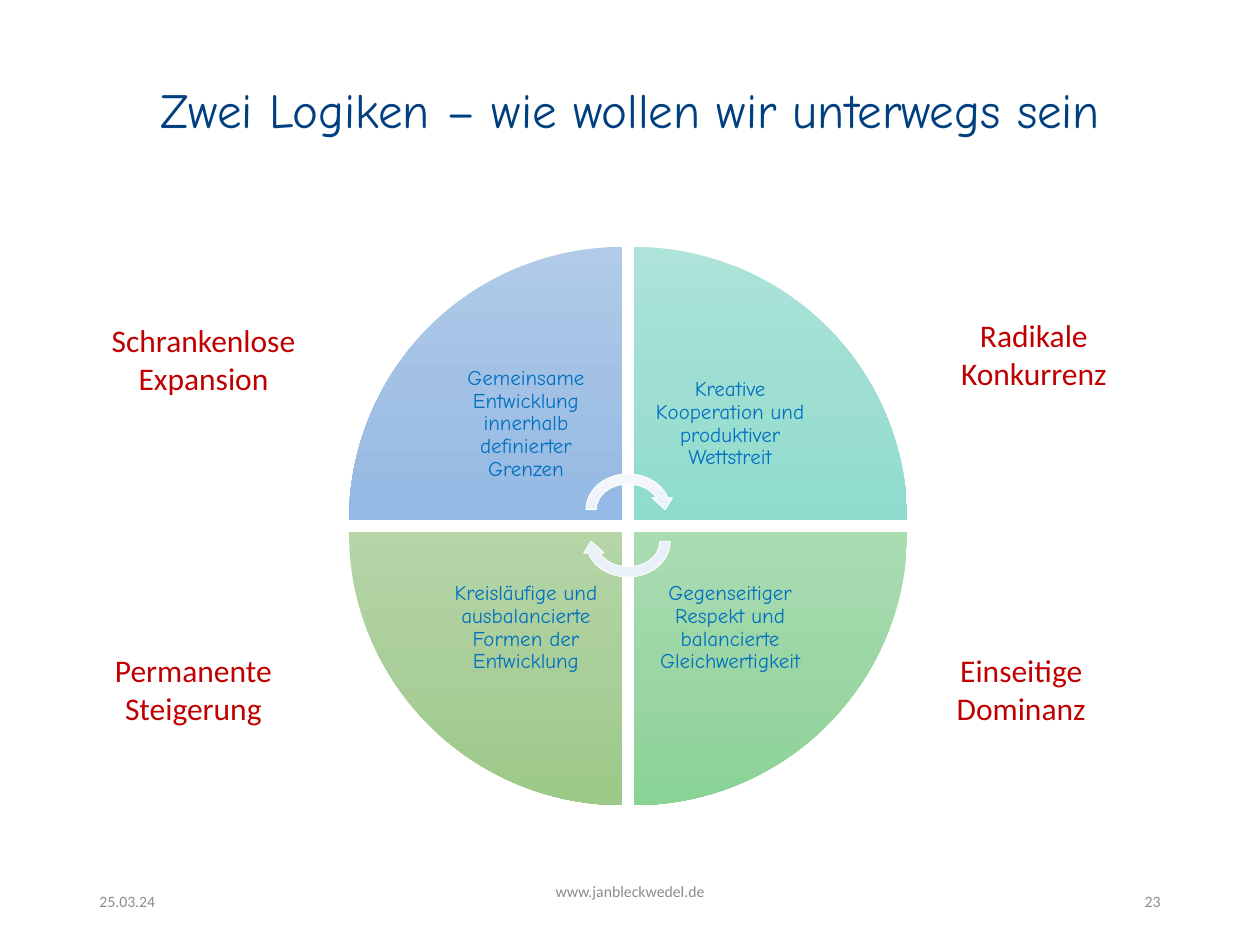
import copy

import pptx
import pptx.dml.color
import pptx.enum.shapes
import pptx.enum.text
import pptx.oxml.ns
import pptx.util

SHAPE = pptx.enum.shapes.MSO_SHAPE
ALIGN = pptx.enum.text.PP_ALIGN
MIDDLE = pptx.enum.text.MSO_ANCHOR.MIDDLE
COLUMNS, ROWS = 100, 75


def color(hex_text):
    return pptx.dml.color.RGBColor.from_string(hex_text)


class SlideBuilder:
    """Holds the style and the current slide; boxes are (column, row, columns, rows)."""

    heading_font, plain_font = "Comic Neue", "Calibri"
    title_color, wedge_text_color = "004080", "0070C0"
    label_color, footer_color = "C00000", "8C8C8C"

    def __init__(self, presentation):
        self.column = presentation.slide_width / COLUMNS
        self.row = presentation.slide_height / ROWS
        self.slide = presentation.slides.add_slide(presentation.slide_layouts[5])
        self.cycle = None

    def lengths(self, box):
        left, top, width, height = box
        return [round(left * self.column), round(top * self.row),
                round(width * self.column), round(height * self.row)]

    def set_text(self, shape, text, font, size, hex_text, align=ALIGN.CENTER, spacing=None):
        shape.text_frame.text = text
        shape.text_frame.word_wrap = True
        paragraph = shape.text_frame.paragraphs[0]
        paragraph.alignment = align
        paragraph.line_spacing = spacing
        for run in paragraph.runs:
            run.font.name = font
            run.font.size = pptx.util.Pt(size)
            run.font.color.rgb = color(hex_text)

    def title(self, text, box):
        title = self.slide.shapes.title
        title.left, title.top, title.width, title.height = self.lengths(box)
        self.set_text(title, text, self.heading_font, 28, self.title_color, spacing=0.9)
        title.text_frame.vertical_anchor = MIDDLE

    def footer(self, text, box, align, bottom=0.05):
        shape = self.slide.shapes.add_textbox(*self.lengths(box))
        self.set_text(shape, text, self.plain_font, 9, self.footer_color, align)
        shape.text_frame.vertical_anchor = MIDDLE
        shape.text_frame.margin_bottom = pptx.util.Inches(bottom)

    def label(self, text, left, top):
        shape = self.slide.shapes.add_textbox(*self.lengths((left, top, 18.5, 7.1)))
        self.set_text(shape, text, self.plain_font, 18, self.label_color)
        shape.text_frame.auto_size = pptx.enum.text.MSO_AUTO_SIZE.SHAPE_TO_FIT_TEXT

    def start_cycle(self):
        self.cycle = self.slide.shapes.add_group_shape()

    def gradient_shape(self, kind, box, rotation, stops):
        """Adds a shape whose three-stop gradient runs downwards despite any rotation."""
        shape = self.cycle.shapes.add_shape(kind, *self.lengths(box))
        shape.rotation = rotation
        shape.shadow.inherit = False
        shape.line.fill.background()
        shape.fill.gradient()
        shape.fill.gradient_angle = 270
        gradient = shape.element.spPr.find(pptx.oxml.ns.qn("a:gradFill"))
        gradient.set("rotWithShape", "0")
        first = gradient.find(pptx.oxml.ns.qn("a:gsLst"))[0]
        first.addnext(copy.deepcopy(first))
        for index, stop in enumerate(shape.fill.gradient_stops):
            stop.position = index / 2
            stop.color.rgb = color(stops[index])
        return shape

    def wedge_text(self, text, box):
        shape = self.cycle.shapes.add_textbox(*self.lengths(box))
        self.set_text(shape, text, self.heading_font, 12, self.wedge_text_color, spacing=0.9)
        frame = shape.text_frame
        frame.vertical_anchor = MIDDLE
        frame.margin_left = frame.margin_right = pptx.util.Inches(0.09)
        frame.margin_top = frame.margin_bottom = pptx.util.Inches(0.09)

    def cycle_arrow(self, box, rotation):
        stops = ("F7F9FC", "EAF0F8", "E7EEF8")
        arrow = self.gradient_shape(SHAPE.CIRCULAR_ARROW, box, rotation, stops)
        arrow.line.color.rgb = color("FFFFFF")
        arrow.line.width = pptx.util.Pt(0.5)


# Clockwise from top left: text, right half?, bottom half?, gradient
WEDGES = [
    ("Gemeinsame Entwicklung innerhalb definierter Grenzen", 0, 0,
     ("B1CBE9", "A3C1E5", "93B9E4")),
    ("Kreative Kooperation und produktiver Wettstreit", 1, 0,
     ("ADE3D9", "9FDED2", "8EDCCE")),
    ("Gegenseitiger Respekt und balancierte Gleichwertigkeit", 1, 1,
     ("AADCB2", "9CD6A5", "8AD396")),
    ("Kreisläufige und ausbalancierte Formen der Entwicklung", 0, 1,
     ("B5D5A7", "AACE9A", "9CC987")),
]
LABELS = [
    ("Radikale Konkurrenz", 72.8, 24.6),
    ("Permanente Steigerung", 6.1, 51.2),
    ("Einseitige Dominanz", 71.8, 51.2),
    ("Schrankenlose Expansion", 6.9, 25),
]
CENTER_X, CENTER_Y, HALF_GAP = 49.85, 41.75, 0.45
WEDGE_SIZE, TEXT_SIZE = 21.7, 15.3
ARROW_WIDTH, ARROW_HEIGHT = 7.5, 6.5


def quadrant(size, right, bottom):
    """Square of the given size in one quadrant, with its corner at the cycle's centre."""
    left = CENTER_X + (HALF_GAP if right else -HALF_GAP - size)
    top = CENTER_Y + (HALF_GAP if bottom else -HALF_GAP - size)
    return left, top, size, size


def main():
    presentation = pptx.Presentation()
    presentation.slide_width = pptx.util.Inches(10)
    presentation.slide_height = pptx.util.Inches(7.5)
    builder = SlideBuilder(presentation)

    builder.title("Zwei Logiken – wie wollen wir unterwegs sein", (6.9, 4, 86.2, 9.9))
    builder.footer("25.03.24", (6.9, 69.5, 22.5, 4), ALIGN.LEFT)
    builder.footer("www.janbleckwedel.de", (33.1, 69.5, 33.8, 4), ALIGN.CENTER, bottom=0.2)
    builder.footer("23", (70.6, 69.5, 22.5, 4), ALIGN.RIGHT)

    builder.start_cycle()
    for index, (text, right, bottom, stops) in enumerate(WEDGES):
        box = quadrant(WEDGE_SIZE, right, bottom)
        builder.gradient_shape(SHAPE.PIE_WEDGE, box, 90 * index, stops)
        builder.wedge_text(text, quadrant(TEXT_SIZE, right, bottom))
    for top, rotation in ((37.2, 0), (39.7, 180)):
        box = (CENTER_X - ARROW_WIDTH / 2, top, ARROW_WIDTH, ARROW_HEIGHT)
        builder.cycle_arrow(box, rotation)

    for label in LABELS:
        builder.label(*label)
    presentation.save("out.pptx")


if __name__ == "__main__":
    main()
